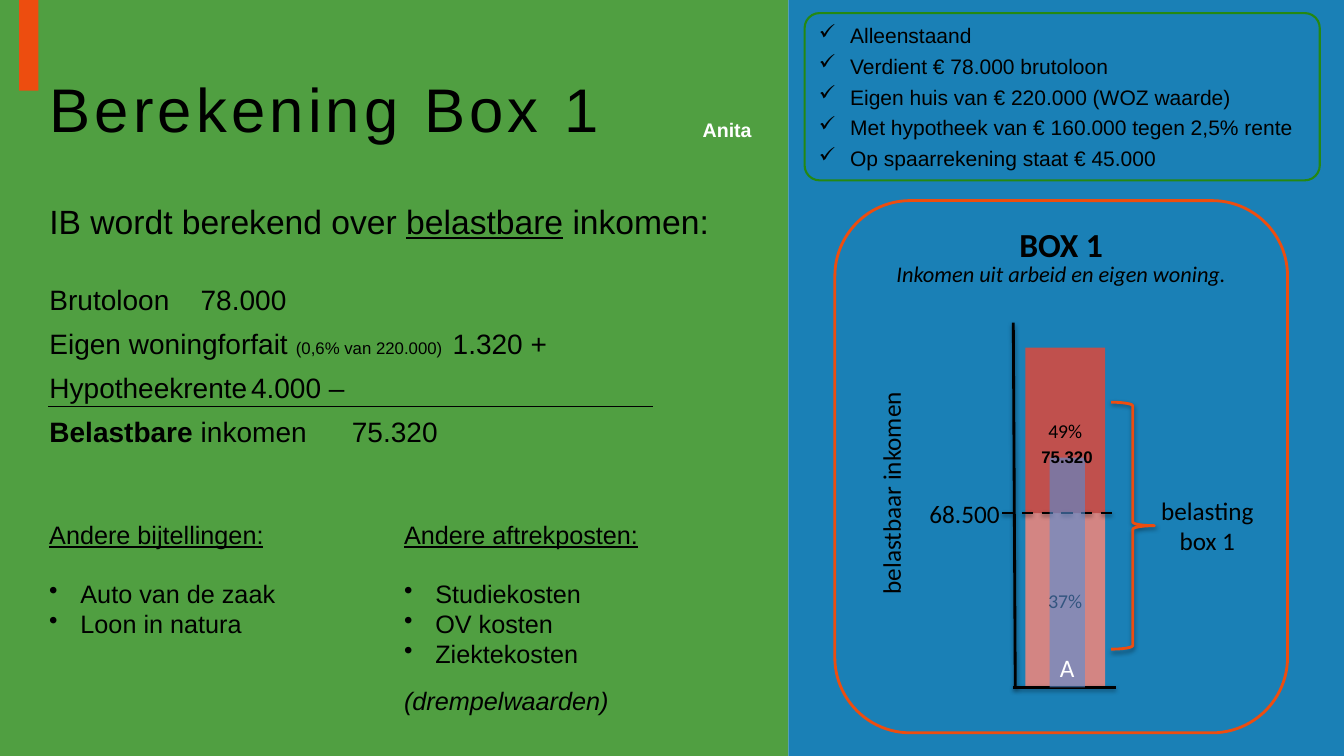
import pptx
import pptx.util
import pptx.dml.color
import pptx.enum.dml
import pptx.enum.shapes
import pptx.enum.text
import pptx.oxml
import pptx.oxml.ns
from dataclasses import dataclass

Inches, Pt = pptx.util.Inches, pptx.util.Pt
qn = pptx.oxml.ns.qn
SHAPE = pptx.enum.shapes.MSO_SHAPE
ALIGN = pptx.enum.text.PP_ALIGN
ANCHOR = pptx.enum.text.MSO_ANCHOR
FIT = pptx.enum.text.MSO_AUTO_SIZE


@dataclass(frozen=True)
class Theme:
    black: str = "000000"
    white: str = "FFFFFF"
    green: str = "258812"
    blue: str = "1A80B6"
    orange: str = "ED4D0F"
    low_rate: str = "D38583"
    high_rate: str = "C0504D"
    income: str = "558ED5"
    text_font: str = "Arial"
    chart_font: str = "Calibri"
    title: int = 44
    lead: int = 24
    row: int = 20
    label: int = 18
    sub: int = 16
    check: int = 15
    small: int = 14
    note: int = 12


T = Theme()

# Content: a paragraph is (runs, paragraph options), a run is (text, format)
TITLE = "Berekening Box 1"
LEAD = [("IB wordt berekend over ", {}), ("belastbare", {"underline": True}), (" inkomen:", {})]
# runs of each row, tab position of the amount in inches
ROWS = [
    ([("Brutoloon\t78.000", {})], 2),
    ([("Eigen woningforfait ", {}), ("(0,6% van 220.000)", {"size": T.note}),
      ("\t1.320 +", {})], 4),
    ([("Hypotheekrente\t4.000 –", {})], 2),
    ([("Belastbare ", {"bold": True}), ("inkomen\t75.320", {})], 3),
]
PROFILE = ["Alleenstaand", "Verdient € 78.000 brutoloon",
           "Eigen huis van € 220.000 (WOZ waarde)",
           "Met hypotheek van € 160.000 tegen 2,5% rente",
           "Op spaarrekening staat € 45.000"]
# heading, items, closing remark, box
OTHER_ITEMS = [
    ("Andere bijtellingen:", ["Auto van de zaak", "Loon in natura"], None,
     (0.39, 5.1, 2.47, 1.31)),
    ("Andere aftrekposten:", ["Studiekosten", "OV kosten", "Ziektekosten"],
     "(drempelwaarden)", (3.91, 5.1, 2.54, 2.09)),
]


def rgb(color):
    return pptx.dml.color.RGBColor.from_string(color)


def xml(tag, parent, **attrs):
    """Append a drawing element to parent."""
    el = parent.makeelement(qn("a:" + tag), {k: str(v) for k, v in attrs.items()})
    parent.append(el)
    return el


def write(tf, paras, anchor=ANCHOR.TOP, wrap=True, fit=FIT.NONE, align=ALIGN.LEFT,
          spacing=1.0, after=0, size=T.label, font=T.text_font,
          color=T.black, tracking=None, **style):
    """Fill a text frame; style holds bold, italic and underline."""
    tf.word_wrap, tf.auto_size, tf.vertical_anchor = wrap, fit, anchor
    for i, para in enumerate(paras):
        runs, opts = (para, {}) if isinstance(para, str) else para
        p = tf.paragraphs[0] if i == 0 else tf.add_paragraph()
        pPr = p._p.get_or_add_pPr()
        bullet = opts.get("bullet")
        pPr.set("marL", str(Inches(0.31) if bullet else 0))
        pPr.set("indent", str(-Inches(0.31) if bullet else 0))
        if bullet:
            xml("buChar", pPr, char=bullet)
        else:
            xml("buNone", pPr)
        if "tab" in opts:
            xml("tab", xml("tabLst", pPr), pos=Inches(opts["tab"]), algn="l")
        p.alignment, p.line_spacing = align, spacing
        p.space_before = Pt(opts.get("before", 0) if i else 0)
        p.space_after = Pt(after)
        for text, run_style in ([(runs, {})] if isinstance(runs, str) else runs):
            fmt = {"size": size, **style, **opts.get("style", {}), **run_style}
            r = p.add_run()
            r.text = text
            r.font.name, r.font.size = font, Pt(fmt.pop("size"))
            r.font.color.rgb = rgb(color)
            for name, value in fmt.items():
                setattr(r.font, name, value)
            if tracking:
                r._r.get_or_add_rPr().set("spc", str(tracking * 100))


def add_shadow(sp):
    """Soft shadow straight below the shape."""
    effects = sp._element.spPr.find(qn("a:effectLst"))
    shadow = xml("outerShdw", effects, blurRad=Pt(3.1), dist=Pt(1.6), dir=5400000,
                 rotWithShape=0)
    xml("alpha", xml("srgbClr", shadow, val=T.black), val=38000)


def shape(s, kind, box, fill=None, alpha=None, line=None, width=2.0):
    sp = s.shapes.add_shape(kind, *map(Inches, box))
    sp.shadow.inherit = False
    if fill:
        sp.fill.solid()
        sp.fill.fore_color.rgb = rgb(fill)
        if alpha:
            xml("alpha", sp._element.spPr.find(qn("a:solidFill"))[0], val=alpha * 1000)
    else:
        sp.fill.background()
    if line:
        sp.line.color.rgb, sp.line.width = rgb(line), Pt(width)
    else:
        sp.line.fill.background()
    return sp


def label(s, box, *paras, **fmt):
    sp = s.shapes.add_textbox(*map(Inches, box))
    write(sp.text_frame, paras, fit=FIT.SHAPE_TO_FIT_TEXT, **fmt)
    return sp


def line(s, x1, y1, x2, y2, width=2, dash=False, shadow=True):
    c = s.shapes.add_connector(pptx.enum.shapes.MSO_CONNECTOR.STRAIGHT,
                               *map(Inches, (x1, y1, x2, y2)))
    c.line.color.rgb, c.line.width = rgb(T.black), Pt(width)
    if dash:
        c.line.dash_style = pptx.enum.dml.MSO_LINE.DASH
    xml("effectLst", c._element.spPr)
    if shadow:
        add_shadow(c)


def place(sp, box):
    sp.left, sp.top, sp.width, sp.height = map(Inches, box)


def main():
    prs = pptx.Presentation()
    prs.slide_width, prs.slide_height = Inches(13.33), Inches(7.5)
    s = prs.slides.add_slide(prs.slide_layouts[1])
    title, body = s.shapes.title, s.placeholders[1]

    # Background panels, behind the placeholders
    for box, color, alpha in [((0, -0.01, 7.82, 7.51), T.green, 80),
                              ((7.82, -0.01, 5.51, 7.51), T.blue, None),
                              ((0.19, -0.25, 0.19, 1.15), T.orange, None)]:
        panel = shape(s, SHAPE.RECTANGLE, box, color, alpha)
        title._element.addprevious(panel._element)

    # Title and calculation
    place(title, (0.39, 0.39, 12.61, 1.45))
    write(title.text_frame, [TITLE], anchor=ANCHOR.MIDDLE, spacing=0.9, size=T.title,
          tracking=3)
    place(body, (0.39, 1.99, 7.42, 2.76))
    rows = [(runs, {"tab": tab, "before": 10 if i else 31.4})
            for i, (runs, tab) in enumerate(ROWS)]
    lead = ([(text, {"size": T.lead, **style}) for text, style in LEAD], {})
    write(body.text_frame, [lead] + rows, spacing=0.9, size=T.row)

    # Profile of Anita
    label(s, (6.87, 1.12, 0.69, 0.34), "Anita", wrap=False, size=T.small,
          color=T.white, bold=True)
    profile = shape(s, SHAPE.ROUNDED_RECTANGLE, (7.98, 0.13, 5.11, 1.66),
                    line=T.green, width=1.5)
    profile.adjustments[0] = 0.09
    write(profile.text_frame, [(fact, {"bullet": "✓"}) for fact in PROFILE],
          after=4, size=T.check)

    # Box 1 diagram: bars stand on the base, split at the rate threshold
    chart = {"font": T.chart_font}
    base, threshold, top, income_top = 6.82, 5.09, 3.45, 4.54
    axis, bar_left, bar_width = 10.05, 10.17, 0.79
    shape(s, SHAPE.ROUNDED_RECTANGLE, (8.28, 1.99, 4.49, 5.28), line=T.orange)
    for rate, upper, lower, color in [("37%", threshold, base, T.low_rate),
                                      ("49%", top, threshold, T.high_rate)]:
        bar = shape(s, SHAPE.RECTANGLE, (bar_left, upper, bar_width, lower - upper), color)
        write(bar.text_frame, [rate], anchor=ANCHOR.MIDDLE, align=ALIGN.CENTER,
              size=T.small, **chart)
    line(s, axis, 3.2, axis + 0.02, base)
    line(s, 9.94, threshold, 11.08, threshold, dash=True)
    label(s, (9.12, 4.89, 0.9, 0.4), "68.500", wrap=False, **chart)
    label(s, (7.72, 4.68, 2.23, 0.4), "belastbaar inkomen", wrap=False, **chart).rotation = 270
    label(s, (8.28, 2.17, 4.49, 0.5), "BOX 1", align=ALIGN.CENTER, size=T.lead,
          bold=True, **chart)
    label(s, (8.28, 2.53, 4.49, 0.37), "Inkomen uit arbeid en eigen woning.",
          align=ALIGN.CENTER, size=T.sub, italic=True, **chart)
    add_shadow(shape(s, SHAPE.RIGHT_BRACE, (11.02, 3.99, 0.43, 2.45), line=T.orange))
    label(s, (11.41, 4.86, 1.13, 0.71), "belasting", "box 1", wrap=False,
          align=ALIGN.CENTER, **chart)
    line(s, axis, base, 11.07, base)

    # Sum line under the calculation
    line(s, 0.48, 4.03, 6.48, 4.03, width=1, shadow=False)

    # Income of Anita in the diagram
    income = shape(s, SHAPE.RECTANGLE, (10.41, income_top, 0.35, base - income_top),
                   T.income, 60)
    income.text_frame.margin_left = income.text_frame.margin_right = 0
    write(income.text_frame, ["A"], anchor=ANCHOR.BOTTOM, align=ALIGN.CENTER,
          color=T.white, **chart)

    # Other additions and deductions
    for heading, items, remark, box in OTHER_ITEMS:
        paras = [(heading, {"style": {"underline": True}})]
        paras += [(item, {"bullet": "•", "before": 0 if i else 20.7})
                  for i, item in enumerate(items)]
        if remark:
            paras.append((remark, {"before": 12, "style": {"italic": True}}))
        label(s, box, *paras, wrap=False)
    label(s, (10.23, 4.38, 0.71, 0.3), "75.320", wrap=False, size=T.note, bold=True)

    prs.save("out.pptx")


if __name__ == "__main__":
    main()
